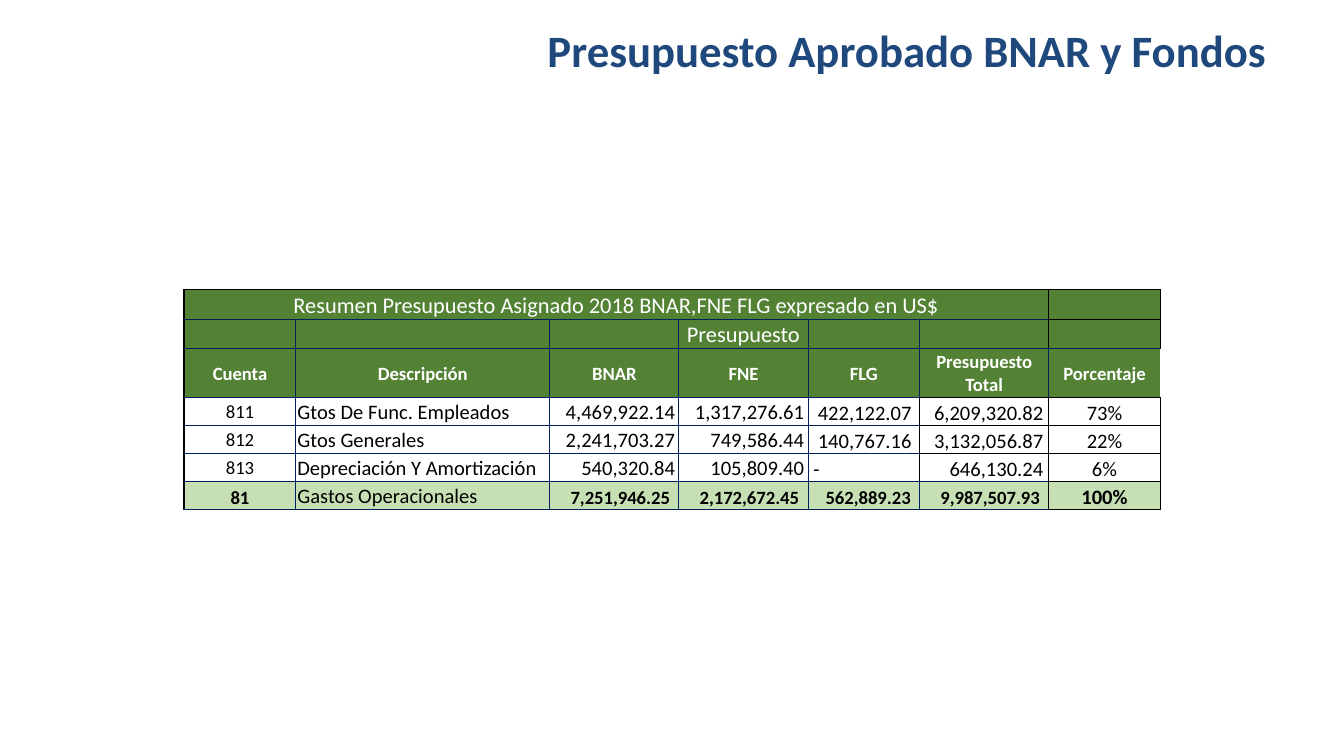
from lxml.etree import SubElement as Sub
from pptx import Presentation
from pptx.dml.color import RGBColor
from pptx.enum.text import MSO_ANCHOR as Anchor, PP_ALIGN as Align
from pptx.oxml.ns import qn
from pptx.util import Cm, Pt

WHITE = RGBColor(0xFF, 0xFF, 0xFF)
BLACK = RGBColor(0x00, 0x00, 0x00)
NAVY = RGBColor(0x00, 0x20, 0x60)
BLUE = RGBColor(0x1F, 0x49, 0x7D)
GREEN = RGBColor(0x54, 0x82, 0x35)
PALE = RGBColor(0xC6, 0xE0, 0xB4)

ROWS = [
    ["Resumen Presupuesto Asignado 2018 BNAR,FNE FLG expresado en US$", "", "", "", "", "", ""],
    ["", "", "", "Presupuesto", "", "", ""],
    ["Cuenta", "Descripción", "BNAR", "FNE", "FLG", "Presupuesto Total", "Porcentaje"],
    ["811", "Gtos De Func. Empleados", "4,469,922.14", "1,317,276.61", "422,122.07", "6,209,320.82", "73%"],
    ["812", "Gtos Generales", "2,241,703.27", "749,586.44", "140,767.16", "3,132,056.87", "22%"],
    ["813", "Depreciación Y Amortización", "540,320.84", "105,809.40", "-", "646,130.24", "6%"],
    ["81", "Gastos Operacionales", "7,251,946.25", "2,172,672.45", "562,889.23", "9,987,507.93", "100%"],
]
WIDTHS = [2.11, 4.8, 2.44, 2.44, 2.11, 2.44, 2.11]
HEIGHTS = [0.56, 0.55, 0.93, 0.53, 0.53, 0.53, 0.53]
PADS = {2: 0.07, 3: 0.07, 4: 0.15, 5: 0.1}
SIDES = {"L": (0, -1), "R": (0, 1), "T": (-1, 0), "B": (1, 0)}
DARK = {(r, 6) for r in range(7) if r != 2} | {(r, 5) for r in (3, 4, 5)}
COOL = {(1, 6, "B"), (2, 6, "T"), (5, 5, "B"), (6, 5, "T")}


def put(frame, text, size=11, color=BLACK, bold=False, align=Align.CENTER):
    para = frame.paragraphs[0]
    para.alignment = align
    if not text:
        Sub(para._p, qn("a:endParaRPr"), sz=str(size * 100))
        return
    run = para.add_run()
    run.text = text
    font = run.font
    font.name = "Calibri"
    font.size = Pt(size)
    font.bold = bold
    font.color.rgb = color


def edge(cell, side, color, width):
    line = Sub(cell._tc.get_or_add_tcPr(), qn("a:ln" + side), w=str(Pt(width)))
    if color is None:
        Sub(line, qn("a:noFill"))
    else:
        Sub(Sub(line, qn("a:solidFill")), qn("a:srgbClr"), val=str(color))


deck = Presentation()
deck.slide_width = Cm(25.4)
deck.slide_height = Cm(14.28)
slide = deck.slides.add_slide(deck.slide_layouts[6])

title = slide.shapes.add_textbox(Cm(1.9), Cm(0.23), Cm(22.86), Cm(1.42)).text_frame
title.word_wrap = True
title.vertical_anchor = Anchor.MIDDLE
title.margin_right = Cm(0.83)
put(title, "Presupuesto Aprobado BNAR y Fondos", size=24, color=BLUE, bold=True, align=Align.RIGHT)

table = slide.shapes.add_table(7, 7, Cm(3.48), Cm(5.47), Cm(sum(WIDTHS)), Cm(sum(HEIGHTS))).table
table.first_row = False
table.horz_banding = False
for col, width in zip(table.columns, WIDTHS):
    col.width = Cm(width)
for row, height in zip(table.rows, HEIGHTS):
    row.height = Cm(height)
table.cell(0, 0).merge(table.cell(0, 5))

for r, row in enumerate(ROWS):
    for c, text in enumerate(row):
        cell = table.cell(r, c)
        if cell.is_spanned:
            continue
        cell.margin_left = cell.margin_right = cell.margin_top = Cm(0.03)
        cell.margin_bottom = 0

        for side, (down, over) in SIDES.items():
            near = (r + down, c + over)
            dark = (r, c) in DARK or near in DARK or (r, c, side) == (0, 0, "R")
            thick = side == "L" and c == 0 or side == "T" and r == 0 and c == 0
            color = BLACK if thick or dark and (r, c, side) not in COOL else NAVY
            if (r, c, side) == (2, 6, "R"):
                color = None
            edge(cell, side, color, 1 if thick else 0.5)

        if 2 < r < 6:
            cell.fill.background()
        else:
            cell.fill.solid()
            cell.fill.fore_color.rgb = GREEN if r < 3 else PALE

        low = r < 2 or r > 2 and c > 3 or r == 6 and c != 1
        cell.vertical_anchor = Anchor.BOTTOM if low else Anchor.MIDDLE
        align = Align.CENTER
        if r > 2 and (c == 1 or text == "-"):
            align = Align.LEFT
            if text == "-":
                cell.margin_left = Cm(0.1)
        elif r > 2 and c in PADS:
            align = Align.RIGHT
            cell.margin_right = Cm(0.17 if r == 6 else PADS[c])

        small = r == 2 or r > 2 and c == 0 or r == 6 and c in PADS
        size = 12 if r < 2 else 10 if small else 11
        put(cell.text_frame, text, size=size, color=WHITE if r < 3 else BLACK,
            bold=r == 2 or r == 6 and c != 1, align=align)

deck.save("out.pptx")
